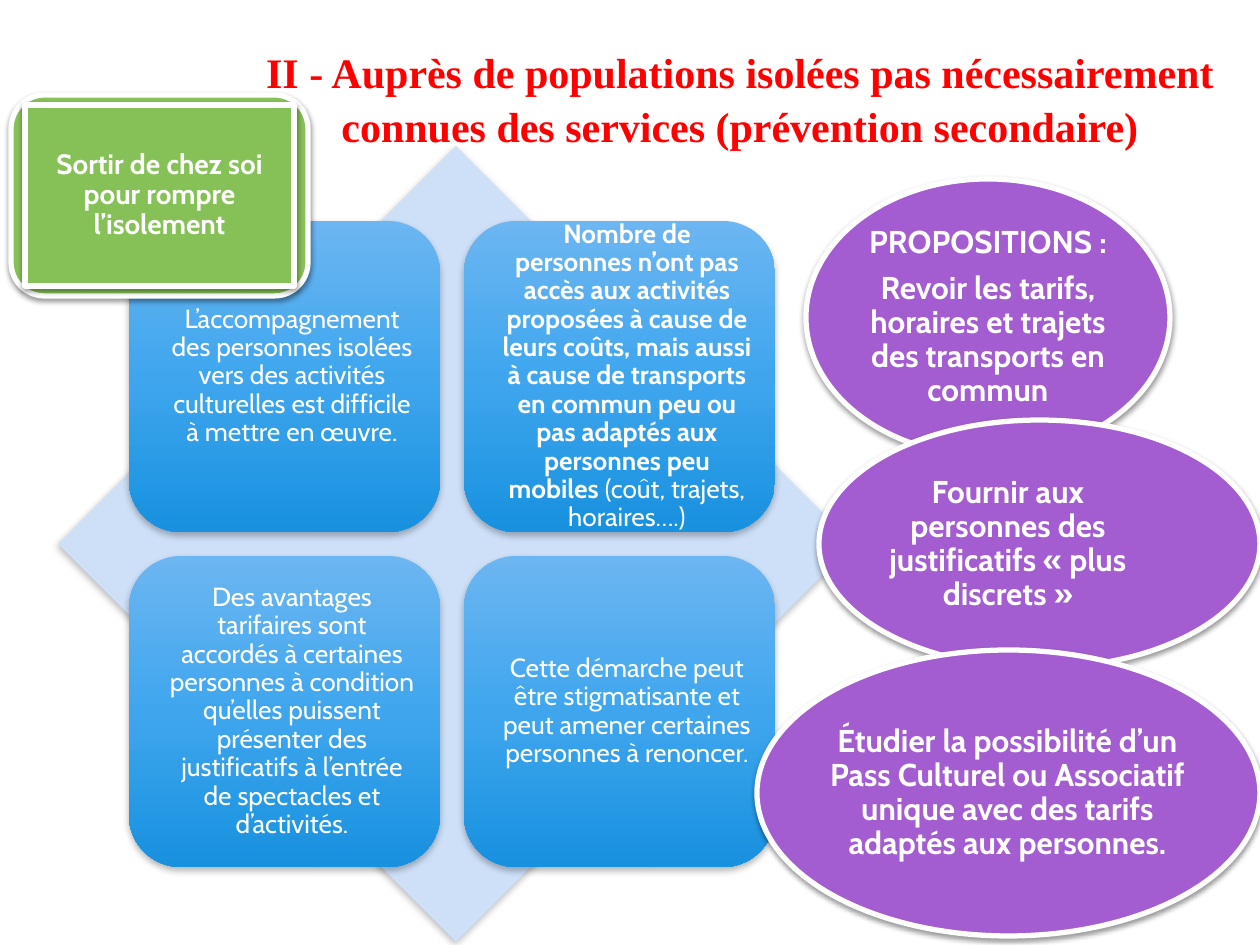
from copy import deepcopy

from lxml import etree
from pptx import Presentation
from pptx.dml.color import RGBColor
from pptx.enum.shapes import MSO_SHAPE
from pptx.enum.text import MSO_ANCHOR, MSO_AUTO_SIZE, PP_ALIGN
from pptx.oxml.ns import qn
from pptx.util import Emu, Pt

DIAMOND, OVAL = MSO_SHAPE.DIAMOND, MSO_SHAPE.OVAL
RECTANGLE, ROUNDED = MSO_SHAPE.RECTANGLE, MSO_SHAPE.ROUNDED_RECTANGLE
TOP, MIDDLE = MSO_ANCHOR.TOP, MSO_ANCHOR.MIDDLE
CENTER, NO_AUTOFIT = PP_ALIGN.CENTER, MSO_AUTO_SIZE.NONE

WHITE = RGBColor(0xFF, 0xFF, 0xFF)
RED = RGBColor(0xFF, 0x00, 0x00)
PALE_BLUE = RGBColor(0xCD, 0xE0, 0xF8)
GREEN = RGBColor(0x86, 0xC1, 0x57)
PURPLE = RGBColor(0xA3, 0x5D, 0xD1)
TILE_STOPS = [
    (0, RGBColor(0x6C, 0xB6, 0xF1)),
    (0.5, RGBColor(0x3F, 0xA6, 0xEE)),
    (1, RGBColor(0x18, 0x91, 0xDF)),
]

EMU_PER_PX = 914400 // 126
TILE_LEFT, TILE_TOP, TILE_SIZE, TILE_PITCH = 129, 221, 311, 335

TITLE_FONT = {"name": "Times New Roman", "size": Pt(24), "bold": True}
TILE_FONT = {"name": "Cabin", "size": Pt(15), "bold": False}
THEME_FONT = {"name": "Cabin", "size": Pt(16), "bold": True}
PROPOSAL_FONT = {"name": "Cabin", "size": Pt(18), "bold": True}

# Each paragraph is a list of (text, bold) spans
TILES = [
    [("L’accompagnement des personnes isolées vers des activités culturelles "
      "est difficile à mettre en œuvre.", False)],
    [("Nombre de personnes n’ont pas accès aux activités proposées à cause de "
      "leurs coûts, mais aussi à cause de transports en commun peu ou pas "
      "adaptés aux personnes peu mobiles", True),
     (" (coût, trajets, horaires….)", False)],
    [("Des avantages tarifaires sont accordés à certaines personnes à condition "
      "qu’elles puissent présenter des justificatifs à l’entrée de spectacles "
      "et d’activités.", False)],
    [("Cette démarche peut être stigmatisante et peut amener certaines "
      "personnes à renoncer.", False)],
]


def px(length):
    return Emu(length * EMU_PER_PX)


def set_values(target, values):
    for name, value in values.items():
        setattr(target, name, value)


def add_shadow(shape, alpha, blur, distance):
    """Soft black shadow straight below the shape."""
    shape.shadow.inherit = False
    effects = shape._element.spPr.find(qn("a:effectLst"))
    outer = etree.SubElement(effects, qn("a:outerShdw"), blurRad=str(Pt(blur)),
                             dist=str(Pt(distance)), dir="5400000", rotWithShape="0")
    color = etree.SubElement(outer, qn("a:srgbClr"), val="000000")
    etree.SubElement(color, qn("a:alpha"), val=str(alpha * 1000))


def add_shape(page, kind, box, fill=None, outlined=False):
    shape = page.shapes.add_shape(kind, *map(px, box))
    if fill is not None:
        shape.fill.solid()
        shape.fill.fore_color.rgb = fill
    if outlined:
        shape.line.color.rgb = WHITE
        shape.line.width = Pt(3)
        add_shadow(shape, 38, 3.1, 1.6)
    else:
        shape.line.fill.background()
        add_shadow(shape, 28, 4, 2)
    return shape


def fill_gradient(shape, stops):
    shape.fill.gradient()
    shape.fill.gradient_angle = 270
    stop_list = shape._element.spPr.find(qn("a:gradFill")).find(qn("a:gsLst"))
    stop_list.insert(1, deepcopy(stop_list[0]))
    for stop, (position, color) in zip(shape.fill.gradient_stops, stops):
        stop.position = position
        stop.color.rgb = color


def write_text(shape, paragraphs, font, insets=(0, 0, 0, 0), after=7,
               color=WHITE, spacing=0.9, anchor=MIDDLE):
    frame = shape.text_frame
    sides = ("margin_left", "margin_top", "margin_right", "margin_bottom")
    set_values(frame, dict(zip(sides, map(px, insets))))
    set_values(frame, {"word_wrap": True, "auto_size": NO_AUTOFIT,
                       "vertical_anchor": anchor})
    for index, spans in enumerate(paragraphs):
        para = frame.paragraphs[0] if index == 0 else frame.add_paragraph()
        set_values(para, {"alignment": CENTER, "line_spacing": spacing,
                          "space_before": Pt(0), "space_after": Pt(after)})
        for text, bold in spans:
            span = para.add_run()
            span.text = text
            set_values(span.font, {**font, "bold": bold})
            span.font.color.rgb = color


def add_title(page, text):
    title = page.shapes.title
    set_values(title, dict(zip(("left", "top", "width", "height"),
                               map(px, (220, 38, 1040, 113)))))
    write_text(title, [[(text, True)]], TITLE_FONT, insets=(13, 6, 13, 6),
               after=0, color=RED, spacing=1.06, anchor=TOP)


def add_tile(page, index, spans):
    row, column = divmod(index, 2)
    box = (TILE_LEFT + column * TILE_PITCH, TILE_TOP + row * TILE_PITCH,
           TILE_SIZE, TILE_SIZE)
    tile = add_shape(page, ROUNDED, box)
    fill_gradient(tile, TILE_STOPS)
    write_text(tile, [spans], TILE_FONT, insets=(23, 23, 8, 23), after=5.2)


def add_proposal(page, oval_box, lines, text_box=None):
    """Purple oval, with its words inside or in a box laid over it."""
    holder = add_shape(page, OVAL, oval_box, PURPLE, outlined=True)
    if text_box:
        holder = page.shapes.add_textbox(*map(px, text_box))
    write_text(holder, [[(line, True)] for line in lines], PROPOSAL_FONT)


def main():
    deck = Presentation()
    deck.slide_width, deck.slide_height = px(1260), px(945)
    page = deck.slides.add_slide(deck.slide_layouts[5])

    add_title(page, "II - Auprès de populations isolées pas nécessairement "
                    "connues des services (prévention secondaire)")

    # Diamond with four findings
    add_shape(page, DIAMOND, (58, 146, 796, 796), PALE_BLUE)
    for index, spans in enumerate(TILES):
        add_tile(page, index, spans)

    # First proposal
    add_proposal(page, (806, 179, 364, 277),
                 ["PROPOSITIONS :",
                  "Revoir les tarifs, horaires et trajets des transports en commun"])

    # Theme label
    add_shape(page, ROUNDED, (11, 95, 297, 201), GREEN, outlined=True)
    label = add_shape(page, RECTANGLE, (25, 105, 269, 181), GREEN, outlined=True)
    write_text(label, [[("Sortir de chez soi pour rompre l’isolement", True)]],
               THEME_FONT, insets=(5, 5, 5, 5), after=5.6)

    # Other proposals
    add_proposal(page, (819, 420, 441, 248),
                 ["Fournir aux personnes des justificatifs « plus discrets »"],
                 (881, 450, 254, 189))
    add_proposal(page, (757, 650, 503, 286),
                 ["Étudier la possibilité d’un Pass Culturel ou Associatif unique "
                  "avec des tarifs adaptés aux personnes."],
                 (830, 692, 355, 203))

    deck.save("out.pptx")


if __name__ == "__main__":
    main()
